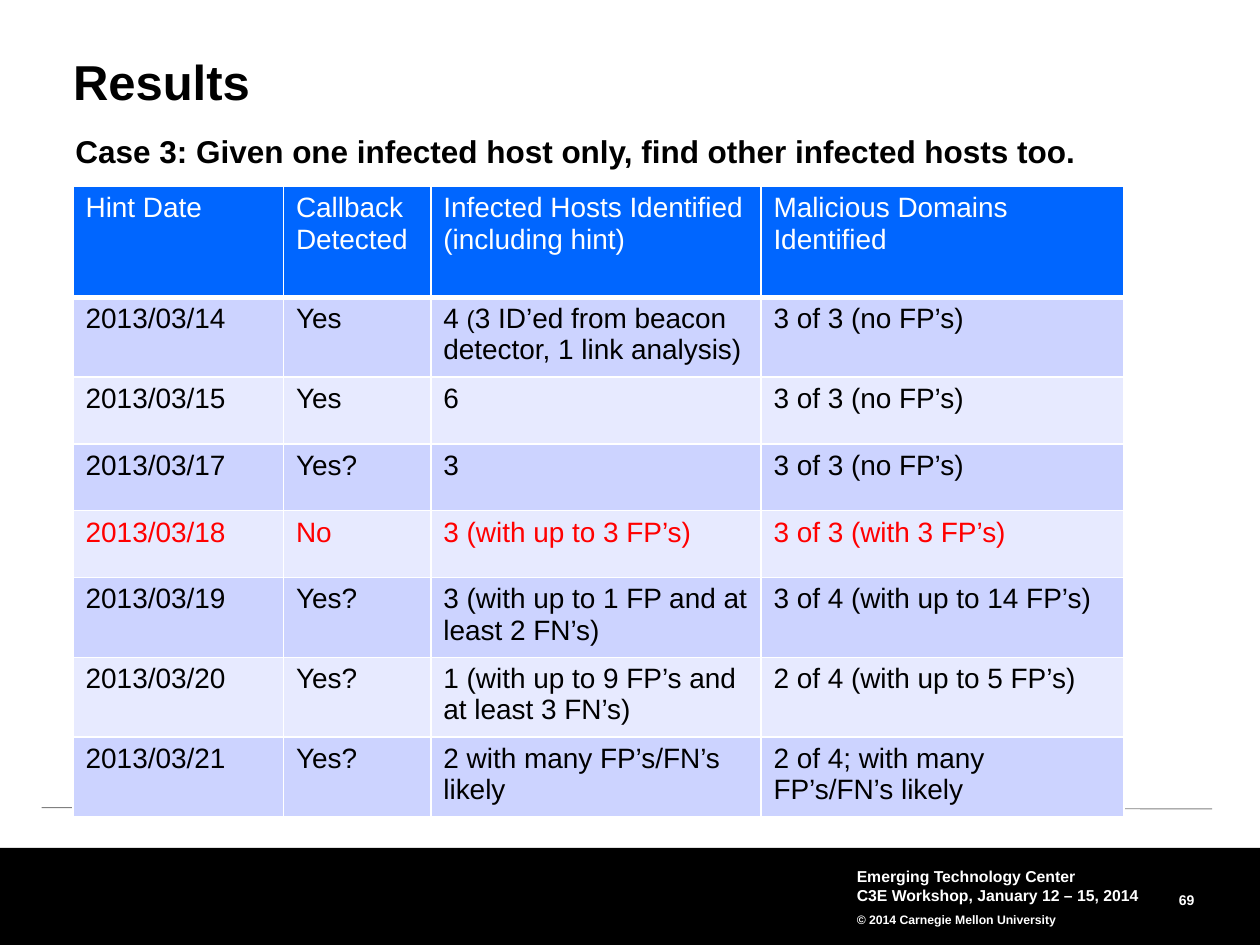
from pptx import Presentation, util as u
from pptx.dml.color import RGBColor
from pptx.enum import shapes, text
from pptx.oxml import parse_xml
from pptx.oxml.ns import nsdecls
from lxml import etree


def rgb(value):
    return RGBColor.from_string(value)


def write(p, content, size=16, color="000000", bold=False, align=text.PP_ALIGN.LEFT, spacing=None):
    p.alignment = align
    if spacing:
        p.line_spacing = spacing
    r = p.add_run()
    r.text = content
    r.font.name = "Arial"
    r.font.size = u.Pt(size)
    r.font.bold = bold
    r.font.color.rgb = rgb(color)


prs = Presentation()
prs.slide_width, prs.slide_height = u.Inches(10), u.Inches(7.5)
s = prs.slides.add_slide(prs.slide_layouts[5])

title = s.shapes.title
title.left, title.top = u.Inches(0.58), u.Inches(0.46)
title.width, title.height = u.Inches(8.92), u.Inches(0.42)
tf = title.text_frame
tf.margin_left = tf.margin_right = tf.margin_top = tf.margin_bottom = 0
tf.vertical_anchor = text.MSO_ANCHOR.TOP
tf.auto_size = text.MSO_AUTO_SIZE.NONE
write(tf.paragraphs[0], "Results", size=28, bold=True, spacing=0.9)

rule = s.shapes.add_connector(shapes.MSO_CONNECTOR.STRAIGHT, u.Inches(0.33), u.Inches(6.41),
                              u.Inches(9.62), u.Inches(6.42))
rule.line.color.rgb = rgb("808080")
rule.line.width = u.Pt(0.5)
etree.SubElement(rule._element.spPr, "{http://schemas.openxmlformats.org/drawingml/2006/main}effectLst")

band = s.shapes.add_shape(shapes.MSO_SHAPE.RECTANGLE, 0, u.Inches(6.73), u.Inches(10), u.Inches(0.77))
band.shadow.inherit = False
band.fill.solid()
band.fill.fore_color.rgb = rgb("000000")
band.line.fill.background()

number = s.shapes.add_textbox(u.Inches(8.56), u.Inches(7.03), u.Inches(0.92), u.Inches(0.18))
tf = number.text_frame
tf.word_wrap = True
tf.vertical_anchor = text.MSO_ANCHOR.MIDDLE
tf.margin_left = tf.margin_right = tf.margin_top = tf.margin_bottom = 0
write(tf.paragraphs[0], "69", size=8, color="FFFFFF", bold=True,
      align=text.PP_ALIGN.RIGHT, spacing=u.Pt(13))

footer = s.shapes.add_textbox(u.Inches(6.75), u.Inches(6.83), u.Inches(2.5), u.Inches(0.58))
tf = footer.text_frame
tf.word_wrap = True
tf.vertical_anchor = text.MSO_ANCHOR.MIDDLE
tf.margin_left = tf.margin_right = tf.margin_top = tf.margin_bottom = u.Inches(0.05)
footer_lines = [("Emerging Technology Center", 9, None),
                ("C3E Workshop, January 12 – 15, 2014", 9, None),
                ("© 2014 Carnegie Mellon University", 7, 1.5)]
for i, (line, size, spacing) in enumerate(footer_lines):
    p = tf.add_paragraph() if i else tf.paragraphs[0]
    write(p, line, size=size, color="FFFFFF", bold=True, spacing=spacing)

rows = [
    ("Hint Date", "Callback Detected", "Infected Hosts Identified (including hint)",
     "Malicious Domains Identified"),
    ("2013/03/14", "Yes", "4 (3 ID’ed from beacon detector, 1 link analysis)", "3 of 3 (no FP’s)"),
    ("2013/03/15", "Yes", "6", "3 of 3 (no FP’s)"),
    ("2013/03/17", "Yes?", "3", "3 of 3 (no FP’s)"),
    ("2013/03/18", "No", "3 (with up to 3 FP’s)", "3 of 3 (with 3 FP’s)"),
    ("2013/03/19", "Yes?", "3 (with up to 1 FP and at least 2 FN’s)", "3 of 4 (with up to 14 FP’s)"),
    ("2013/03/20", "Yes?", "1 (with up to 9 FP’s and at least 3 FN’s)", "2 of 4 (with up to 5 FP’s)"),
    ("2013/03/21", "Yes?", "2 with many FP’s/FN’s likely", "2 of 4; with many FP’s/FN’s likely"),
]
widths = [1.67, 1.17, 2.62, 2.88]
heights = [0.88, 0.62, 0.53, 0.53, 0.53, 0.62, 0.62, 0.53]
table = s.shapes.add_table(len(rows), len(widths), u.Inches(0.58), u.Inches(1.48),
                           u.Inches(8.33), u.Inches(5.02)).table
for column, width in zip(table.columns, widths):
    column.width = u.Inches(width)

for i, (row, height) in enumerate(zip(rows, heights)):
    table.rows[i].height = u.Inches(height)
    fill = "0066FF" if i == 0 else ("E7EAFF", "CCD3FF")[i % 2]
    color = "FFFFFF" if i == 0 else "FF0000" if row[1] == "No" else "000000"
    if i in (3, 5, 7):
        fill = "CCD3FF"
    for j, content in enumerate(row):
        cell = table.cell(i, j)
        tcPr = cell._tc.get_or_add_tcPr()
        for side in "LRTB":
            heavy = (i == 0 and side == "B") or (i == 1 and side == "T")
            tcPr.append(parse_xml(
                f'<a:ln{side} {nsdecls("a")} w="{u.Pt(3 if heavy else 1)}">'
                '<a:solidFill><a:srgbClr val="FFFFFF"/></a:solidFill>'
                f'</a:ln{side}>'))
        cell.fill.solid()
        cell.fill.fore_color.rgb = rgb(fill)
        p = cell.text_frame.paragraphs[0]
        if content.startswith("4 ("):
            for part, size in (("4 ", 16), ("(", 14), (content[3:], 16)):
                write(p, part, size=size, color=color)
        else:
            write(p, content, color=color)

heading = s.shapes.add_textbox(u.Inches(0.5), u.Inches(1), u.Inches(8.29), u.Inches(0.4))
heading.text_frame.word_wrap = False
write(heading.text_frame.paragraphs[0],
      "Case 3: Given one infected host only, find other infected hosts too.", size=18, bold=True)

prs.save("out.pptx")
